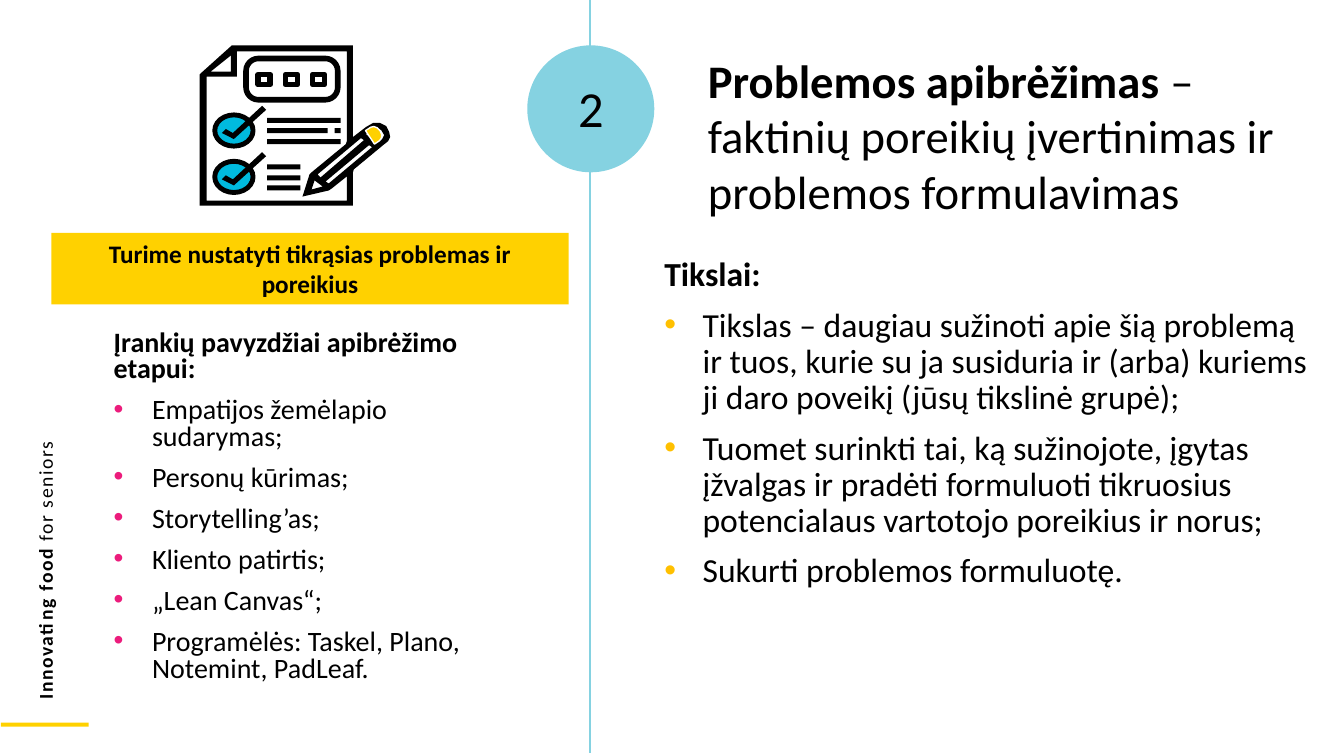
"""Builds the problem definition slide, with its goals and example tools."""
from lxml.etree import SubElement
from pptx import Presentation
from pptx.dml.color import RGBColor
from pptx.enum.shapes import MSO_CONNECTOR, MSO_SHAPE
from pptx.enum.text import MSO_ANCHOR, MSO_AUTO_SIZE, PP_ALIGN
from pptx.oxml.ns import qn
from pptx.util import Inches, Pt

COLORS = {
    "black": "000000",
    "white": "FFFFFF",
    "aqua": "85D2E1",
    "yellow": "FFD100",
    "amber": "FFC000",
    "pink": "EC1C7C",
    "cyan": "00BADE",
}


def write(frame, text, lead="", size=18, bold=False, align=PP_ALIGN.LEFT,
          line_spacing=1.0, bullet=None, tracking=None):
    """Add a paragraph, with an optional bold lead before the text."""
    first = not frame.paragraphs[0].runs
    paragraph = frame.paragraphs[0] if first else frame.add_paragraph()
    paragraph.alignment = align
    paragraph.line_spacing = line_spacing
    paragraph.space_before = Pt(0 if first else 10)
    if bullet:
        properties = paragraph._p.get_or_add_pPr()
        properties.set("marL", str(Inches(0.38)))
        properties.set("indent", str(Inches(-0.38)))
        color = SubElement(properties, qn("a:buClr"))
        SubElement(color, qn("a:srgbClr")).set("val", COLORS[bullet])
        SubElement(properties, qn("a:buFont")).set("typeface", "Arial")
        SubElement(properties, qn("a:buChar")).set("char", "•")
    for part, is_bold in ((lead, True), (text, bold)):
        if part:
            run = paragraph.add_run()
            run.text = part
            run.font.name = "Calibri"
            run.font.size = Pt(size)
            run.font.bold = is_bold
            run.font.color.rgb = RGBColor.from_string(COLORS["black"])
            if tracking:
                run._r.get_or_add_rPr().set("spc", str(tracking))


def paint(shape, fill=None, line=None, width=1):
    """Give a shape a flat fill and outline without shadow."""
    shape.shadow.inherit = False
    if fill:
        shape.fill.solid()
        shape.fill.fore_color.rgb = RGBColor.from_string(COLORS[fill])
    else:
        shape.fill.background()
    if line:
        shape.line.color.rgb = RGBColor.from_string(COLORS[line])
        shape.line.width = Pt(width)
    else:
        shape.line.fill.background()
    return shape


deck = Presentation()
deck.slide_width, deck.slide_height = Inches(13.33), Inches(7.5)
slide = deck.slides.add_slide(deck.slide_layouts[5])
shapes = slide.shapes

divider = shapes.add_connector(
    MSO_CONNECTOR.STRAIGHT, Inches(5.85), Inches(-0.03), Inches(5.85), Inches(7.47))
divider.line.color.rgb = RGBColor.from_string(COLORS["aqua"])
divider.line.width = Pt(1)
SubElement(divider._element.spPr, qn("a:effectLst"))

paint(shapes.add_shape(
    MSO_SHAPE.OVAL, Inches(5.23), Inches(0.45), Inches(1.26), Inches(1.26)), "aqua")
paint(shapes.add_shape(
    MSO_SHAPE.RECTANGLE, Inches(0.01), Inches(7.17), Inches(0.87), Inches(0.04)), "yellow")

title = shapes.title
title.left, title.top = Inches(6.92), Inches(0.46)
title.width, title.height = Inches(5.94), Inches(1.8)
title.text_frame.auto_size = MSO_AUTO_SIZE.NONE
title.text_frame.vertical_anchor = MSO_ANCHOR.TOP
write(title.text_frame, "– faktinių poreikių įvertinimas ir problemos formulavimas",
      lead="Problemos apibrėžimas ", size=33.3)

text_areas = {
    "tagline": (-3.32, 3.1, 7.54, 0.34),
    "goals": (6.49, 2.51, 6.62, 4.07),
    "tools": (1.03, 3.23, 4.2, 3.76),
    "step": (5.23, 0.78, 1.26, 0.94),
}
frames = {}
for part, area in text_areas.items():
    box = shapes.add_textbox(*map(Inches, area))
    box.rotation = 270 if part == "tagline" else 0
    frames[part] = box.text_frame
    frames[part].word_wrap = True

write(frames["tagline"], "for seniors", lead="Innovating food ", size=14, tracking=110)
write(frames["step"], "2", size=36, align=PP_ALIGN.CENTER, line_spacing=0.9)

write(frames["goals"], "Tikslai:", size=24, bold=True, line_spacing=0.9)
for goal in (
    "Tikslas – daugiau sužinoti apie šią problemą ir tuos, kurie su ja susiduria "
    "ir (arba) kuriems ji daro poveikį (jūsų tikslinė grupė);",
    "Tuomet surinkti tai, ką sužinojote, įgytas įžvalgas ir pradėti formuluoti "
    "tikruosius potencialaus vartotojo poreikius ir norus;",
    "Sukurti problemos formuluotę.",
):
    write(frames["goals"], goal, size=24, line_spacing=0.9, bullet="amber")

write(frames["tools"], "Įrankių pavyzdžiai apibrėžimo etapui:",
      size=20, bold=True, line_spacing=0.8)
for tool in (
    "Empatijos žemėlapio sudarymas;",
    "Personų kūrimas;",
    "Storytelling’as;",
    "Kliento patirtis;",
    "„Lean Canvas“;",
    "Programėlės: Taskel, Plano, Notemint, PadLeaf.",
):
    write(frames["tools"], tool, size=20, line_spacing=0.8, bullet="pink")

banner = paint(shapes.add_shape(
    MSO_SHAPE.RECTANGLE, Inches(0.51), Inches(2.31), Inches(5.13), Inches(0.71)), "yellow")
banner.text_frame.word_wrap = True
banner.text_frame.vertical_anchor = MSO_ANCHOR.MIDDLE
write(banner.text_frame, "Turime nustatyti tikrąsias problemas ir poreikius",
      bold=True, align=PP_ALIGN.CENTER)

page_and_pencil = [
    [(2.3, 0.45), (3.5, 0.45), (3.5, 1.36), (3.63, 1.26), (3.7, 1.22), (3.77, 1.22),
     (3.83, 1.25), (3.86, 1.31), (3.87, 1.36), (3.85, 1.4), (3.8, 1.44), (3.51, 1.68),
     (3.5, 1.71), (3.5, 2.04), (1.98, 2.04), (1.98, 0.74), (2, 0.72)],
    [(3.44, 0.51), (2.35, 0.51), (2.35, 0.76), (2.05, 0.76), (2.05, 1.99), (3.44, 1.99),
     (3.44, 1.75), (3.29, 1.87), (3.26, 1.89), (3, 1.95), (3.07, 1.73), (3.09, 1.71),
     (3.43, 1.43), (3.44, 1.4)],
    [(3.58, 1.37), (3.15, 1.73), (3.18, 1.76), (3.61, 1.39)],
    [(3.26, 1.82), (3.69, 1.46), (3.66, 1.44), (3.23, 1.8)],
    [(2.09, 0.71), (2.29, 0.71), (2.29, 0.55)],
    [(3.73, 1.42), (3.79, 1.38), (3.81, 1.34), (3.78, 1.29), (3.73, 1.27), (3.68, 1.29),
     (3.63, 1.33)],
    [(3.12, 1.79), (3.09, 1.88), (3.2, 1.85)],
]
tick = [(2.2, 1.32), (2.24, 1.28), (2.31, 1.32), (2.6, 1.05), (2.64, 1.09), (2.32, 1.38)]
tick_gap = 0.46
lower_tick = [(x, y + tick_gap) for x, y in tick]

for ring_top in (1.14, 1.14 + tick_gap):
    paint(shapes.add_shape(
        MSO_SHAPE.OVAL, Inches(2.13), Inches(ring_top), Inches(0.38), Inches(0.31)),
        "cyan", "black", 3.5)

for contours in (page_and_pencil, [tick], [lower_tick]):
    outlines = [[(Inches(x), Inches(y)) for x, y in contour] for contour in contours]
    builder = shapes.build_freeform(*outlines[0][0])
    builder.add_line_segments(outlines[0][1:])
    for outline in outlines[1:]:
        builder.move_to(*outline[0])
        builder.add_line_segments(outline[1:])
    paint(builder.convert_to_shape(), "black")

label = paint(shapes.add_shape(
    MSO_SHAPE.ROUNDED_RECTANGLE, Inches(2.44), Inches(0.58), Inches(0.91), Inches(0.41)),
    line="black", width=4)
label.adjustments[0] = 0.3
for column in range(3):
    paint(shapes.add_shape(
        MSO_SHAPE.RECTANGLE, Inches(2.56 + 0.27 * column), Inches(0.74),
        Inches(0.12), Inches(0.1)), line="black", width=4)

for left, top, width in (
    (2.65, 1.17, 0.73), (2.65, 1.27, 0.6), (3.32, 1.27, 0.06), (2.65, 1.38, 0.73),
    (2.65, 1.63, 0.33), (2.65, 1.74, 0.33), (2.65, 1.84, 0.33),
):
    paint(shapes.add_shape(
        MSO_SHAPE.RECTANGLE, Inches(left), Inches(top), Inches(width), Inches(0.05)), "black")

eraser = paint(shapes.add_shape(
    MSO_SHAPE.FLOWCHART_DELAY, Inches(3.66), Inches(1.25), Inches(0.12), Inches(0.16)),
    "yellow", "white")
eraser.rotation = 326.6

deck.save("out.pptx")
